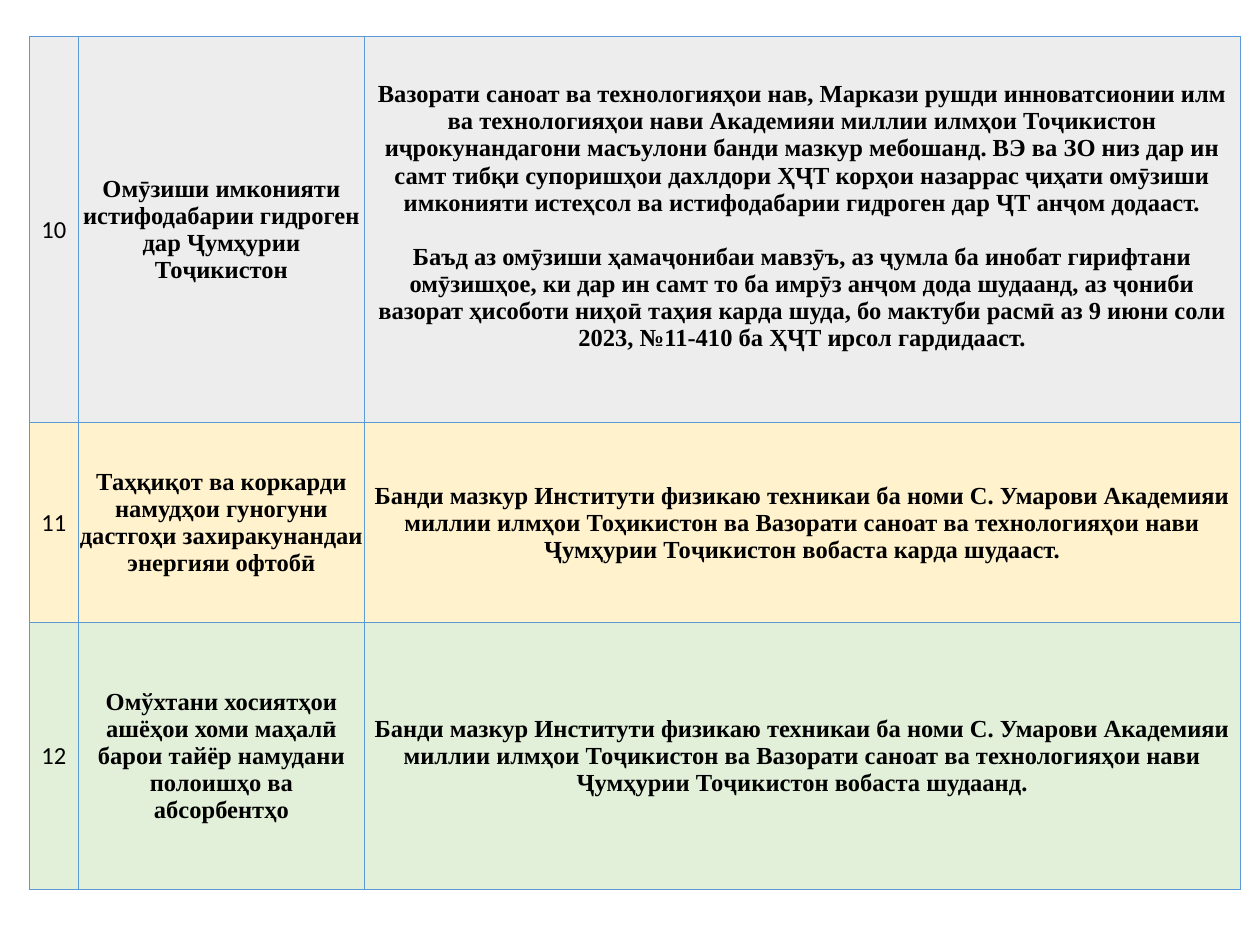
from lxml import etree
from pptx import Presentation
from pptx import util as u
from pptx.dml.color import RGBColor
from pptx.enum import text
from pptx.oxml.ns import qn

ROWS = [
    ("EDEDED", 7.77, "10",
     "Омӯзиши имконияти истифодабарии гидроген дар Ҷумҳурии Тоҷикистон",
     "Вазорати саноат ва технологияҳои нав, Маркази рушди инноватсионии илм "
     "ва технологияҳои нави Академияи миллии илмҳои Тоҷикистон "
     "иҷрокунандагони масъулони банди мазкур мебошанд. ВЭ ва ЗО низ дар ин "
     "самт тибқи супоришҳои дахлдори ҲҶТ корҳои назаррас ҷиҳати омӯзиши "
     "имконияти истеҳсол ва истифодабарии гидроген дар ҶТ анҷом додааст.\n"
     "Баъд аз омӯзиши ҳамаҷонибаи мавзӯъ, аз ҷумла ба инобат гирифтани "
     "омӯзишҳое, ки дар ин самт то ба имрӯз анҷом дода шудаанд, аз ҷониби "
     "вазорат ҳисоботи ниҳоӣ таҳия карда шуда, бо мактуби расмӣ аз 9 июни "
     "соли 2023, №11-410 ба ҲҶТ ирсол гардидааст."),
    ("FFF2CC", 4.04, "11",
     "Таҳқиқот ва коркарди намудҳои гуногуни дастгоҳи захиракунандаи "
     "энергияи офтобӣ",
     "Банди мазкур Институти физикаю техникаи ба номи С. Умарови Академияи "
     "миллии илмҳои Тоҳикистон ва Вазорати саноат ва технологияҳои нави "
     "Ҷумҳурии Тоҷикистон вобаста карда шудааст."),
    ("E2F0D9", 5.38, "12",
     "Омўхтани хосиятҳои ашёҳои хоми маҳалӣ барои тайёр намудани полоишҳо "
     "ва абсорбентҳо",
     "Банди мазкур Институти физикаю техникаи ба номи С. Умарови Академияи "
     "миллии илмҳои Тоҷикистон ва Вазорати саноат ва технологияҳои нави "
     "Ҷумҳурии Тоҷикистон вобаста шудаанд."),
]
COLS = [0.99, 5.77, 17.65]


def color(code):
    return RGBColor.from_string(code)


class Deck:
    size, ink, edge = 14, "000000", "5B9BD5"
    line = 15.5  # height of one text line, in points

    def __init__(self, slide):
        self.slide = slide

    def table(self, left, top, cols, rows):
        high = sum(row[1] for row in rows)
        grid = self.slide.shapes.add_table(
            len(rows), len(cols), u.Cm(left), u.Cm(top),
            u.Cm(sum(cols)), u.Cm(high)).table
        grid.first_row = grid.horz_banding = False
        for col, wide in zip(grid.columns, cols):
            col.width = u.Cm(wide)
        for line, (fill, tall, *words) in zip(grid.rows, rows):
            line.height = u.Cm(tall)
            for i, (cell, word) in enumerate(zip(line.cells, words)):
                self.cell(cell, word, fill, i > 0)
        return grid

    def cell(self, cell, words, fill, bold):
        cell.margin_left = cell.margin_right = cell.margin_top = u.Cm(0.02)
        cell.margin_bottom = 0
        cell.vertical_anchor = text.MSO_ANCHOR.MIDDLE
        cell.text_frame.text = words
        for i, para in enumerate(cell.text_frame.paragraphs):
            para.alignment = text.PP_ALIGN.CENTER
            para.space_before = u.Pt(self.line if i else 0)
            for run in para.runs:
                run.font.name = "Times New Roman" if bold else "Calibri"
                run.font.size = u.Pt(self.size)
                run.font.bold = bold
                run.font.color.rgb = color(self.ink)
        self.border(cell)
        cell.fill.solid()
        cell.fill.fore_color.rgb = color(fill)

    def border(self, cell):
        props = cell._tc.get_or_add_tcPr()
        for side in ("lnL", "lnR", "lnT", "lnB"):
            ln = etree.SubElement(props, qn("a:" + side), w=str(u.Pt(0.5)))
            solid = etree.SubElement(ln, qn("a:solidFill"))
            etree.SubElement(solid, qn("a:srgbClr"), val=self.edge)


def main():
    prs = Presentation()
    prs.slide_width, prs.slide_height = u.Cm(25.4), u.Cm(19.05)
    deck = Deck(prs.slides.add_slide(prs.slide_layouts[6]))
    grid = deck.table(0.59, 0.74, COLS, ROWS)
    # The longest text sits half a line above the middle of its cell
    grid.cell(0, 2).margin_bottom = u.Pt(deck.line)
    prs.save("out.pptx")


if __name__ == "__main__":
    main()
